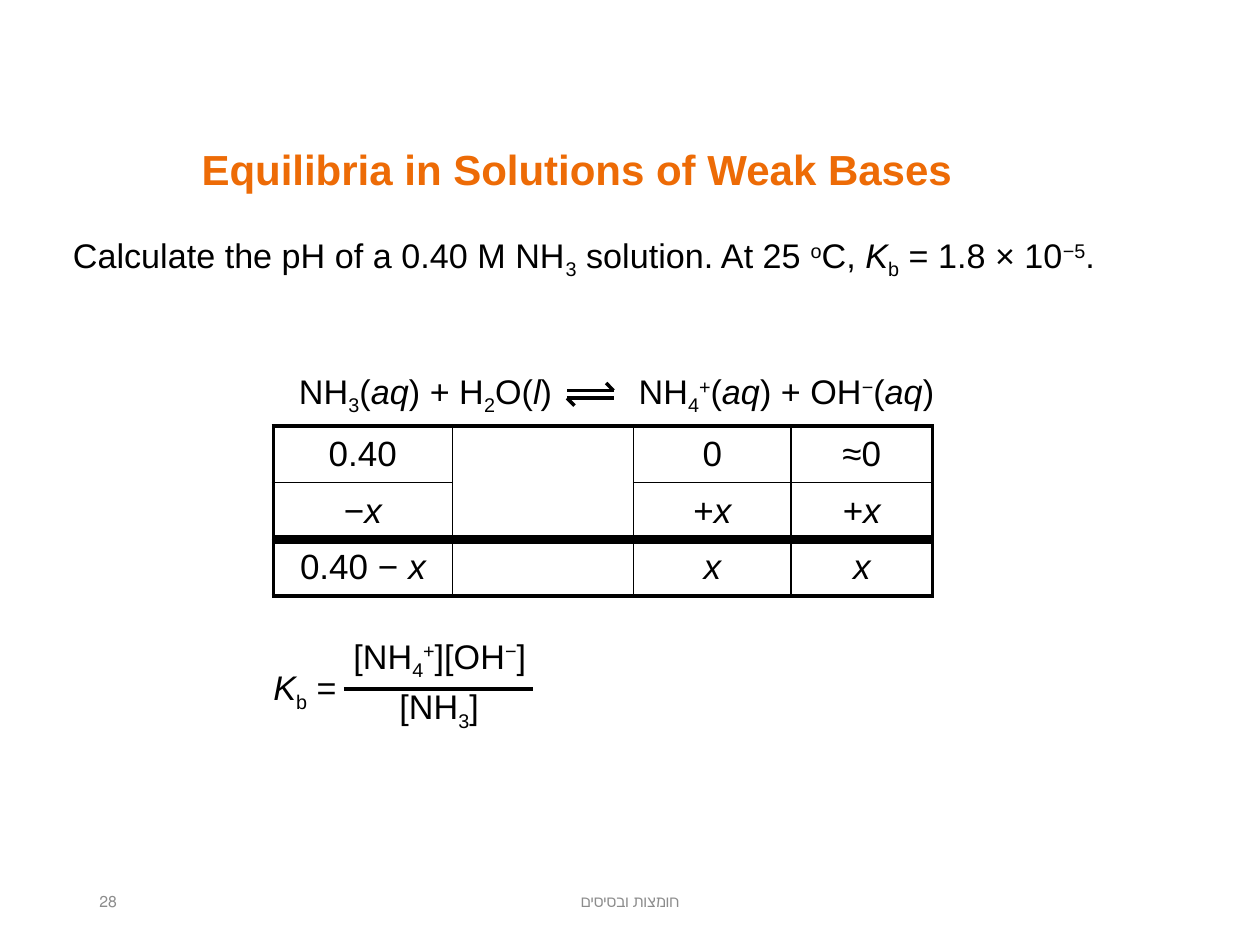
from dataclasses import dataclass

from lxml import etree
from pptx import Presentation
from pptx import util as u
from pptx.dml.color import RGBColor
from pptx.enum import shapes, text
from pptx.oxml.ns import qn


@dataclass(frozen=True)
class Theme:
    font: str = "Arial"
    footer_font: str = "Calibri"
    black: str = "000000"
    orange: str = "ED6B06"
    grey: str = "8C8C8C"
    title_size: float = 24
    body_size: float = 19.5
    cell_size: float = 20
    footer_size: float = 9
    outer_border: float = 2.25
    inner_border: float = 1
    line_width: float = 2
    divider_width: float = 5


THEME = Theme()
LEFT, CENTER, RIGHT = (text.PP_ALIGN.LEFT, text.PP_ALIGN.CENTER, text.PP_ALIGN.RIGHT)
MIDDLE = text.MSO_ANCHOR.MIDDLE
BASELINES = {"_": "-25000", "^": "30000"}

EMPTY_COLUMN = 1
CELLS = [
    ["0.40", "", "0", "≈0"],
    ["−|/x", "", "+|/x", "+|/x"],
    ["0.40 − |/x", "", "/x", "/x"],
]
COLUMN_WIDTHS = [1.42, 1.44, 1.25, 1.12]
TABLE_LEFT, TABLE_TOP, ROW_HEIGHT = 2.17, 3.38, 0.45


def write_formula(paragraph, formula, size, color=THEME.black, font=THEME.font, bold=False):
    """Add runs split at "|"; a part led by _ is lowered, ^ raised, / italic."""
    for part in formula.split("|"):
        mark = part[:1] if part[:1] in ("_", "^", "/") else ""
        run = paragraph.add_run()
        run.text = part[len(mark):]
        style = {"name": font, "size": u.Pt(size), "bold": bold, "italic": mark == "/"}
        for name, value in style.items():
            setattr(run.font, name, value)
        run.font.color.rgb = RGBColor.from_string(color)
        if mark in BASELINES:
            run.font._element.set("baseline", BASELINES[mark])


def add_text(slide, box, formula, size=THEME.body_size, align=LEFT, frame_format=None, **style):
    shape = slide.shapes.add_textbox(*map(u.Inches, box))
    frame = shape.text_frame
    frame_values = {"word_wrap": True, "auto_size": text.MSO_AUTO_SIZE.SHAPE_TO_FIT_TEXT}
    for name, value in {**frame_values, **(frame_format or {})}.items():
        setattr(frame, name, value)
    paragraph = frame.paragraphs[0]
    paragraph.alignment = align
    write_formula(paragraph, formula, size, **style)
    return paragraph


def add_title(slide, box, title):
    paragraph = add_text(slide, box, title, THEME.title_size, color=THEME.orange, bold=True,
                         frame_format={"margin_left": u.Inches(0.38)})
    spacing = etree.SubElement(paragraph._p.get_or_add_pPr(), qn("a:spcBef"))
    etree.SubElement(spacing, qn("a:spcPct"), val="50000")


def add_footer(slide, box, label, align):
    paragraph = add_text(slide, box, label, THEME.footer_size, align,
                         {"vertical_anchor": MIDDLE, "auto_size": text.MSO_AUTO_SIZE.NONE},
                         color=THEME.grey, font=THEME.footer_font)
    paragraph._p.get_or_add_pPr().set("rtl", "1")


def add_line(slide, start, end, width=THEME.line_width):
    line = slide.shapes.add_connector(
        shapes.MSO_CONNECTOR.STRAIGHT, *map(u.Inches, (*start, *end)))
    line.line.color.rgb = RGBColor.from_string(THEME.black)
    line.line.width = u.Pt(width)
    etree.SubElement(line._element.spPr, qn("a:effectLst"))


def add_equilibrium_arrows(slide, left, right, top, bottom):
    barb = 0.06
    add_line(slide, (left, top), (right, top))
    add_line(slide, (right, top), (right - barb, top - barb))
    add_line(slide, (right, bottom), (left, bottom))
    add_line(slide, (left, bottom), (left + barb, bottom + barb))


def set_borders(cell, row, column):
    """Heavy lines round the table, thin ones inside, none across the merged column."""
    outer, inner = THEME.outer_border, THEME.inner_border
    last_row, last_column = len(CELLS) - 1, len(COLUMN_WIDTHS) - 1
    across = 0 if column == EMPTY_COLUMN else inner
    widths = {
        "a:lnL": outer if column == 0 else inner,
        "a:lnR": outer if column == last_column else inner,
        "a:lnT": outer if row == 0 else across,
        "a:lnB": outer if row == last_row or cell.is_merge_origin else across,
    }
    properties = cell._tc.get_or_add_tcPr()
    for tag, width in widths.items():
        if width:
            line = etree.SubElement(properties, qn(tag), w=str(u.Pt(width)))
            fill = etree.SubElement(line, qn("a:solidFill"))
            etree.SubElement(fill, qn("a:srgbClr"), val=THEME.black)


def add_concentration_table(slide):
    width, height = sum(COLUMN_WIDTHS), ROW_HEIGHT * len(CELLS)
    table = slide.shapes.add_table(
        len(CELLS), len(COLUMN_WIDTHS),
        *map(u.Inches, (TABLE_LEFT, TABLE_TOP, width, height))).table
    table.first_row = table.horz_banding = False
    for column, column_width in zip(table.columns, COLUMN_WIDTHS):
        column.width = u.Inches(column_width)
    table.cell(0, EMPTY_COLUMN).merge(table.cell(len(CELLS) - 1, EMPTY_COLUMN))

    cell_format = {"vertical_anchor": MIDDLE,
                   "margin_left": u.Inches(0.07), "margin_right": u.Inches(0.07),
                   "margin_top": u.Inches(0.04), "margin_bottom": u.Inches(0.04)}
    for row, formulas in enumerate(CELLS):
        table.rows[row].height = u.Inches(ROW_HEIGHT)
        for column, formula in enumerate(formulas):
            cell = table.cell(row, column)
            for name, value in cell_format.items():
                setattr(cell, name, value)
            set_borders(cell, row, column)
            cell.fill.background()
            if formula:
                paragraph = cell.text_frame.paragraphs[0]
                paragraph.alignment = CENTER
                write_formula(paragraph, formula, THEME.cell_size)

    divider = TABLE_TOP + 2 * ROW_HEIGHT
    add_line(slide, (TABLE_LEFT, divider), (TABLE_LEFT + width, divider), THEME.divider_width)


def add_reaction(slide):
    no_wrap = {"word_wrap": False}
    add_text(slide, (2.23, 2.89, 2.25, 0.43), "NH|_3|(|/aq|) + H|_2|O(|/l|)",
             align=RIGHT, frame_format=no_wrap)
    add_equilibrium_arrows(slide, 4.5, 4.87, 3.1, 3.16)
    add_text(slide, (4.97, 2.89, 2.6, 0.43), "NH|_4|^+|(|/aq|) + OH|^−|(|/aq|)",
             frame_format=no_wrap)


def add_base_constant(slide):
    centered = {"word_wrap": False, "vertical_anchor": MIDDLE}
    add_text(slide, (2.05, 5.26, 0.72, 0.43), "/K|_b| =", align=RIGHT, frame_format=centered)
    add_text(slide, (2.68, 5.01, 1.62, 0.43), "[NH|_4|^+|][OH|^−|]",
             align=CENTER, frame_format=centered)
    add_line(slide, (2.73, 5.47), (4.23, 5.47))
    add_text(slide, (3.06, 5.41, 0.85, 0.43), "[NH|_3|]", align=CENTER, frame_format=centered)


def main():
    presentation = Presentation()
    presentation.slide_width, presentation.slide_height = u.Inches(10), u.Inches(7.5)
    slide = presentation.slides.add_slide(presentation.slide_layouts[6])
    add_footer(slide, (3.31, 6.95, 3.38, 0.4), "חומצות ובסיסים", CENTER)
    add_footer(slide, (0.69, 6.95, 2.25, 0.4), "28", LEFT)
    add_title(slide, (1.22, 1.09, 7.5, 0.48), "Equilibria in Solutions of Weak Bases")
    add_text(slide, (0.48, 1.81, 8.62, 0.43),
             "Calculate the pH of a 0.40 M NH|_3| solution. At 25 |^o|C, |/K|_b| = 1.8 × 10|^−5|.")
    add_base_constant(slide)
    add_reaction(slide)
    add_concentration_table(slide)
    presentation.save("out.pptx")


if __name__ == "__main__":
    main()
